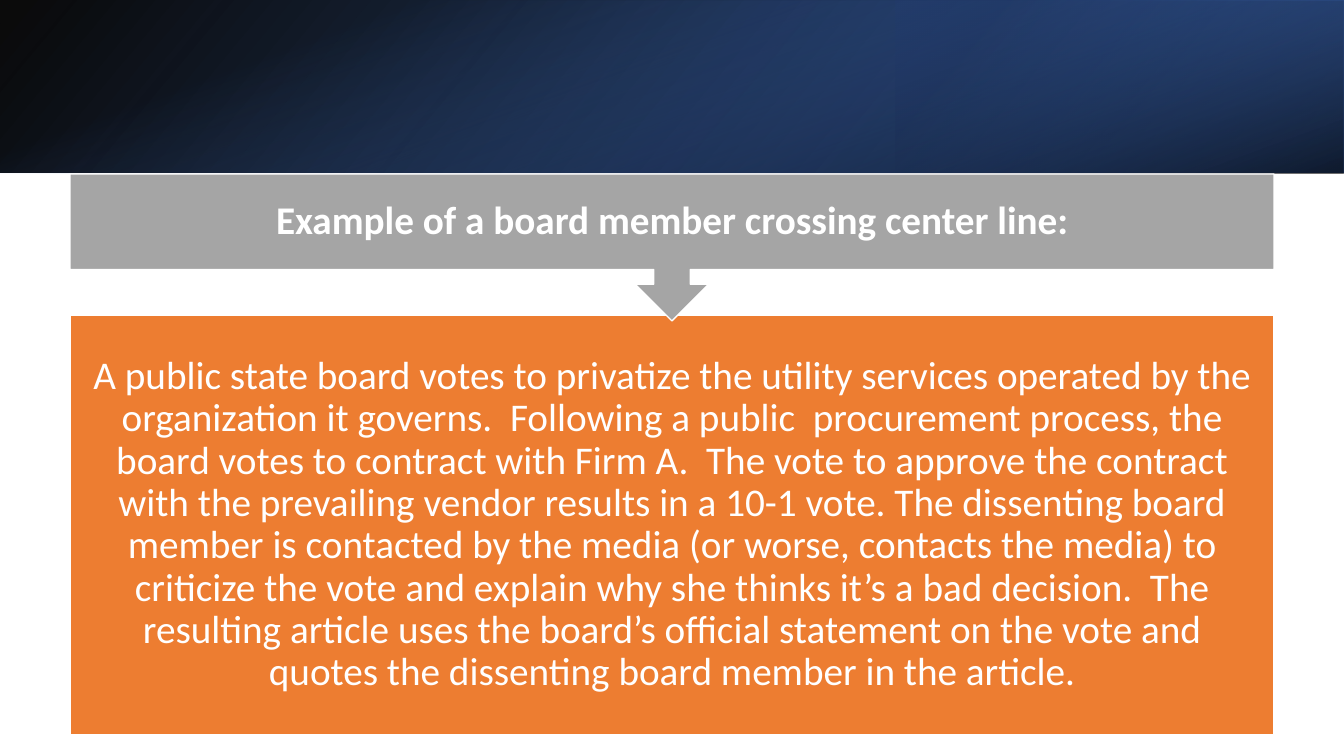
"""Build a slide showing an example of a board member crossing the center line."""
from dataclasses import dataclass
from typing import NamedTuple

from lxml import etree
from pptx import Presentation
from pptx import util as u
from pptx.dml.color import RGBColor
from pptx.enum import shapes, text
from pptx.oxml.ns import qn

SLIDE_WIDTH, SLIDE_HEIGHT = 1344, 756
BAND_HEIGHT = 173
EMU_PER_PX = u.Inches(1) / 100.8


@dataclass(frozen=True)
class Theme:
    """Colours, font and sizes of the slide."""
    white: str = "FFFFFF"
    black: str = "000000"
    navy: str = "203864"
    deep_blue: str = "2F5597"
    blue: str = "4472C4"
    gray: str = "A5A5A5"
    orange: str = "ED7D31"
    font: str = "Calibri"
    text_size: int = 28
    line_width: int = 1
    inset: int = 22


THEME = Theme()


class Box(NamedTuple):
    """A frame in px."""
    left: int
    top: int
    width: int
    height: int


class Stop(NamedTuple):
    """A gradient stop, with position and opacity in percent."""
    position: int
    color: str
    opacity: int


class Band(NamedTuple):
    """One gradient layer of the header; the angle runs clockwise."""
    box: Box
    stops: tuple[Stop, Stop]
    angle: int
    rotation: int = 0
    flipped: bool = False


class Panel(NamedTuple):
    """A filled shape with its wording."""
    box: Box
    kind: shapes.MSO_SHAPE
    color: str
    wording: str
    bold: bool = False


BANDS = (
    Band(Box(0, 0, SLIDE_WIDTH, BAND_HEIGHT),
         (Stop(0, THEME.black, 96), Stop(100, THEME.deep_blue, 100)), 140, flipped=True),
    Band(Box(896, 0, 448, BAND_HEIGHT),
         (Stop(19, THEME.navy, 68), Stop(100, THEME.blue, 79)), 320, 180, True),
    Band(Box(585, -585, BAND_HEIGHT, SLIDE_WIDTH),
         (Stop(23, THEME.blue, 0), Stop(99, THEME.black, 74)), 340, 90),
)

PANELS = (
    Panel(Box(70, 315, 1204, 420), shapes.MSO_SHAPE.RECTANGLE, THEME.orange,
          "A public state board votes to privatize the utility services operated by the "
          "organization it governs.  Following a public  procurement process, the board votes "
          "to contract with Firm A.  The vote to approve the contract with the prevailing "
          "vendor results in a 10-1 vote. The dissenting board member is contacted by the media "
          "(or worse, contacts the media) to criticize the vote and explain why she thinks it’s "
          "a bad decision.  The resulting article uses the board’s official statement on the "
          "vote and quotes the dissenting board member in the article."),
    Panel(Box(70, 174, 1204, 147), shapes.MSO_SHAPE.DOWN_ARROW_CALLOUT, THEME.gray,
          "Example of a board member crossing center line:", True),
)


def px(length: int) -> u.Emu:
    """Turn px into EMU."""
    return u.Emu(round(length * EMU_PER_PX))


def add_box(slide, kind: shapes.MSO_SHAPE, box: Box):
    """Add a preset shape without shadow."""
    shape = slide.shapes.add_shape(kind, *map(px, box))
    shape.shadow.inherit = False
    return shape


def add_band(slide, band: Band) -> None:
    """Draw one gradient layer."""
    shape = add_box(slide, shapes.MSO_SHAPE.RECTANGLE, band.box)
    shape.rotation = band.rotation
    if band.flipped:
        shape._element.spPr.get_or_add_xfrm().set("flipH", "1")
    shape.line.fill.background()
    shape.fill.gradient()
    shape.fill.gradient_angle = 360 - band.angle
    for gradient_stop, stop in zip(shape.fill.gradient_stops, band.stops):
        gradient_stop.position = stop.position / 100
        gradient_stop.color.rgb = RGBColor.from_string(stop.color)
        color = gradient_stop._gs.find(qn("a:srgbClr"))
        etree.SubElement(color, qn("a:alpha")).set("val", str(stop.opacity * 1000))


def write_text(shape, wording: str, *, size: int, color: str, bold: bool) -> None:
    """Write one centred paragraph into a shape."""
    frame = shape.text_frame
    frame.word_wrap = True
    frame.vertical_anchor = text.MSO_ANCHOR.MIDDLE
    for side in ("left", "top", "right", "bottom"):
        setattr(frame, f"margin_{side}", px(THEME.inset))
    paragraph = frame.paragraphs[0]
    paragraph.alignment = text.PP_ALIGN.CENTER
    paragraph.line_spacing = 0.9
    run = paragraph.add_run()
    run.text = wording
    run.font.name = THEME.font
    run.font.size = u.Pt(size)
    run.font.bold = bold
    run.font.color.rgb = RGBColor.from_string(color)


def add_panel(slide, panel: Panel) -> None:
    """Draw a filled panel with its wording."""
    shape = add_box(slide, panel.kind, panel.box)
    shape.fill.solid()
    shape.fill.fore_color.rgb = RGBColor.from_string(panel.color)
    shape.line.color.rgb = RGBColor.from_string(THEME.white)
    shape.line.width = u.Pt(THEME.line_width)
    write_text(shape, panel.wording, size=THEME.text_size, color=THEME.white, bold=panel.bold)


def main() -> None:
    """Build and save the presentation."""
    presentation = Presentation()
    presentation.slide_width, presentation.slide_height = px(SLIDE_WIDTH), px(SLIDE_HEIGHT)
    slide = presentation.slides.add_slide(presentation.slide_layouts[6])
    for band in BANDS:
        add_band(slide, band)
    for panel in PANELS:
        add_panel(slide, panel)
    presentation.save("out.pptx")


if __name__ == "__main__":
    main()
